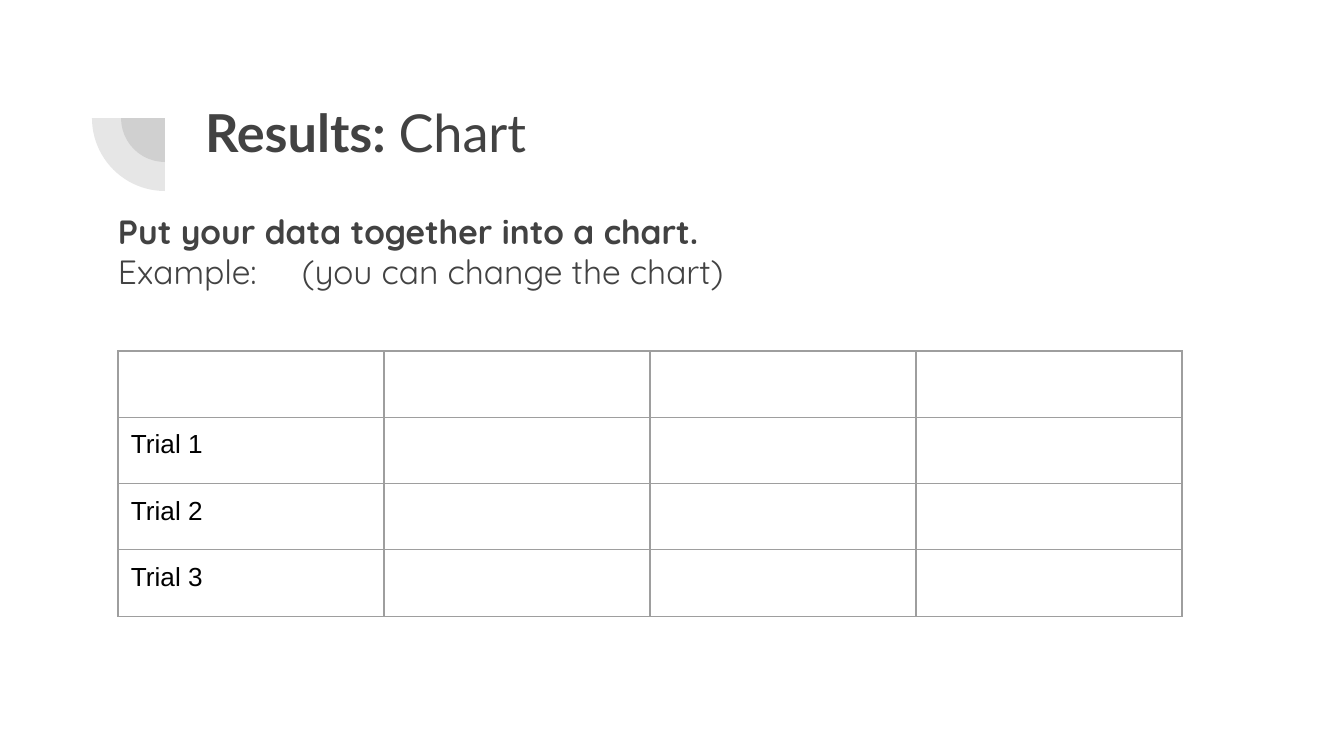
from dataclasses import dataclass

from lxml import etree
from pptx import Presentation
from pptx.dml.color import RGBColor
from pptx.enum.shapes import MSO_SHAPE
from pptx.oxml.ns import qn
from pptx.util import Emu, Pt

PIE = MSO_SHAPE.PIE
SCALE = 914400 / 134.4  # EMU in one px
INK = "424242"
GREY = "9E9E9E"
PAD = 13


@dataclass
class Run:
    text: str
    bold: bool = False


@dataclass
class Box:
    left: int
    top: int
    width: int
    height: int
    font: str
    size: int
    lines: list[list[Run]]


def px(n: int) -> Emu:
    return Emu(round(n * SCALE))


def color(code: str) -> RGBColor:
    return RGBColor.from_string(code)


def draw_pie(slide, x: int, y: int, radius: int) -> None:
    """Draw a clear quarter disc, down and left of its centre."""
    pie = slide.shapes.add_shape(
        PIE, px(x - radius), px(y - radius), px(2 * radius), px(2 * radius))
    pie.adjustments[0] = 108
    pie.adjustments[1] = 162
    pie.rotation = 270
    pie.shadow.inherit = False
    pie.fill.solid()
    pie.fill.fore_color.rgb = color(INK)
    pie.line.fill.background()
    tint = pie._element.spPr.find(".//" + qn("a:srgbClr"))
    etree.SubElement(tint, qn("a:alpha"), val="13000")


def set_pad(item) -> None:
    item.margin_left = item.margin_right = px(PAD)
    item.margin_top = item.margin_bottom = px(PAD)


def set_font(font, name: str, size: int, code: str) -> None:
    font.name = name
    font.size = Pt(size)
    font.color.rgb = color(code)


def set_tab(para, stop: int) -> None:
    tabs = etree.Element(qn("a:tabLst"))
    etree.SubElement(tabs, qn("a:tab"), pos=str(px(stop)), algn="l")
    para._p.get_or_add_pPr().insert(0, tabs)


def draw_text(slide, box: Box) -> None:
    shape = slide.shapes.add_textbox(
        px(box.left), px(box.top), px(box.width), px(box.height))
    frame = shape.text_frame
    frame.word_wrap = True
    set_pad(frame)
    for i, line in enumerate(box.lines):
        para = frame.add_paragraph() if i else frame.paragraphs[0]
        set_font(para.font, box.font, box.size, INK)
        for part in line:
            run = para.add_run()
            run.text = part.text
            run.font.bold = part.bold
        if any("\t" in part.text for part in line):
            set_tab(para, 184)


def set_edge(cell) -> None:
    props = cell._tc.get_or_add_tcPr()
    for i, side in enumerate(("lnL", "lnR", "lnT", "lnB")):
        edge = etree.Element(qn("a:" + side), w=str(Pt(0.75)))
        fill = etree.SubElement(edge, qn("a:solidFill"))
        etree.SubElement(fill, qn("a:srgbClr"), val=GREY)
        props.insert(i, edge)


def draw_table(slide, left: int, top: int, wide: int, high: int,
               rows: list[list[str]]) -> None:
    count, cols = len(rows), len(rows[0])
    table = slide.shapes.add_table(
        count, cols, px(left), px(top), px(wide * cols), px(high * count)).table
    table.first_row = table.horz_banding = False
    for r, row in enumerate(rows):
        for c, text in enumerate(row):
            cell = table.cell(r, c)
            set_pad(cell)
            cell.fill.background()
            set_edge(cell)
            if text:
                cell.text = text
                set_font(cell.text_frame.paragraphs[0].font, "Arial", 14, "000000")


def main() -> None:
    deck = Presentation()
    deck.slide_width, deck.slide_height = px(1344), px(756)
    slide = deck.slides.add_slide(deck.slide_layouts[6])

    # Corner mark
    for radius in (44, 73):
        draw_pie(slide, 165, 118, radius)

    # Title and task
    draw_text(slide, Box(192, 87, 1034, 147, "Lato", 28, [
        [Run("Results: ", True), Run("Chart")]]))
    draw_text(slide, Box(105, 198, 1134, 109, "Quicksand", 18, [
        [Run("Put your data together into a chart.", True)],
        [Run("Example:\t(you can change the chart)")]]))

    # Trials: the first row and the data cells stay empty
    heads = [""] + [f"Trial {n}" for n in (1, 2, 3)]
    draw_table(slide, 118, 351, 266, 57, [[head, "", "", ""] for head in heads])

    deck.save("out.pptx")


if __name__ == "__main__":
    main()
